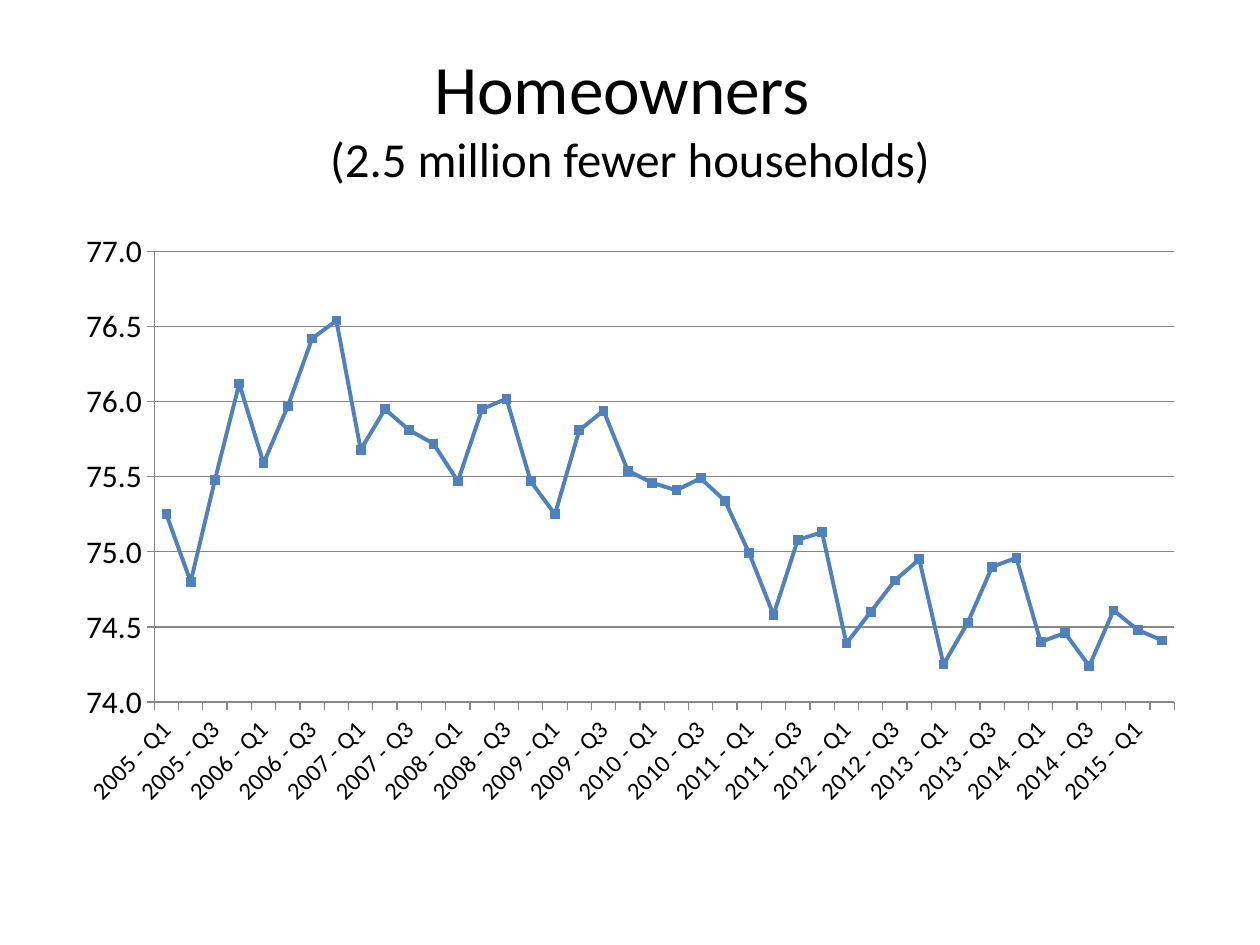
from pptx import Presentation
from pptx import util as u
from pptx.chart import data as chart_data
from pptx.dml import color
from pptx.enum import chart as charts, text

FONT = "Calibri"
BLACK, GREY, BLUE = "000000", "878787", "4F81BD"
FIRST_YEAR = 2005
HOUSEHOLDS = [
    75.25, 74.8, 75.48, 76.12,
    75.59, 75.97, 76.42, 76.54,
    75.68, 75.95, 75.81, 75.72,
    75.47, 75.95, 76.02, 75.47,
    75.25, 75.81, 75.94, 75.54,
    75.46, 75.41, 75.49, 75.34,
    74.99, 74.58, 75.08, 75.13,
    74.39, 74.6, 74.81, 74.95,
    74.25, 74.53, 74.9, 74.96,
    74.4, 74.46, 74.24, 74.61,
    74.48, 74.41,
]


def rgb(value):
    """Turn a hex string into a colour."""
    return color.RGBColor.from_string(value)


def style_font(font, size):
    """Set the face, size and colour of a font."""
    font.name, font.size, font.bold = FONT, u.Pt(size), False
    font.color.rgb = rgb(BLACK)


def style_line(line, value, width):
    """Set the colour and width of a line."""
    line.color.rgb = rgb(value)
    line.width = u.Pt(width)


def place_title(page, left, top, width, height):
    """Place the heading and its smaller second line."""
    title = page.shapes.title
    title.left, title.top, title.width, title.height = left, top, width, height
    frame = title.text_frame
    frame.word_wrap = True
    frame.auto_size = text.MSO_AUTO_SIZE.NONE
    frame.vertical_anchor = text.MSO_ANCHOR.MIDDLE
    para = frame.paragraphs[0]
    para.alignment = text.PP_ALIGN.CENTER
    style_font(para.font, 39.6)
    para.add_run().text = "Homeowners "
    para.add_line_break()
    span = para.add_run()
    span.text = "(2.5 million fewer households)"
    span.font.size = u.Pt(27.9)


def style_axis(axis, size):
    """Give an axis its labels, outer ticks and grey line."""
    style_font(axis.tick_labels.font, size)
    axis.major_tick_mark = charts.XL_TICK_MARK.OUTSIDE
    axis.minor_tick_mark = charts.XL_TICK_MARK.NONE
    style_line(axis.format.line, GREY, 0.75)


def place_chart(page, left, top, width, height):
    """Place the quarterly line chart."""
    data = chart_data.CategoryChartData(number_format="0.00")
    data.categories = [f"{FIRST_YEAR + i // 4} - Q{i % 4 + 1}"
                       for i in range(len(HOUSEHOLDS))]
    data.add_series("Series 1", HOUSEHOLDS)
    chart = page.shapes.add_chart(
        charts.XL_CHART_TYPE.LINE_MARKERS, left, top, width, height, data).chart
    chart.has_legend = chart.has_title = False
    style_font(chart.font, 18)

    style_axis(chart.category_axis, 14)
    label_body = chart.category_axis.tick_labels.font._element.getparent().getparent().getparent().bodyPr
    label_body.set("rot", "-2700000")
    label_body.set("vert", "horz")

    values = chart.value_axis
    style_axis(values, 18)
    values.minimum_scale, values.maximum_scale, values.major_unit = 74, 77, 0.5
    values.tick_labels.number_format = "#,##0.0"
    values.tick_labels.number_format_is_linked = False
    values.has_major_gridlines = True
    style_line(values.major_gridlines.format.line, GREY, 0.75)

    plot = chart.plots[0]
    plot.vary_by_categories = False
    series = plot.series[0]
    series.smooth = False
    style_line(series.format.line, BLUE, 2.25)
    marker = series.marker
    marker.style, marker.size = charts.XL_MARKER_STYLE.SQUARE, 5
    marker.format.fill.solid()
    marker.format.fill.fore_color.rgb = rgb(BLUE)
    style_line(marker.format.line, BLUE, 0.75)


def main():
    """Build the slide and save it."""
    deck = Presentation()
    deck.slide_width, deck.slide_height = u.Inches(10), u.Inches(7.5)
    page = deck.slides.add_slide(deck.slide_layouts[5])
    left, width = u.Inches(0.5), u.Inches(9)
    place_title(page, left, u.Inches(0.3), width, u.Inches(1.25))
    place_chart(page, left, u.Inches(1.75), width, u.Inches(4.74))
    deck.save("out.pptx")


if __name__ == "__main__":
    main()
